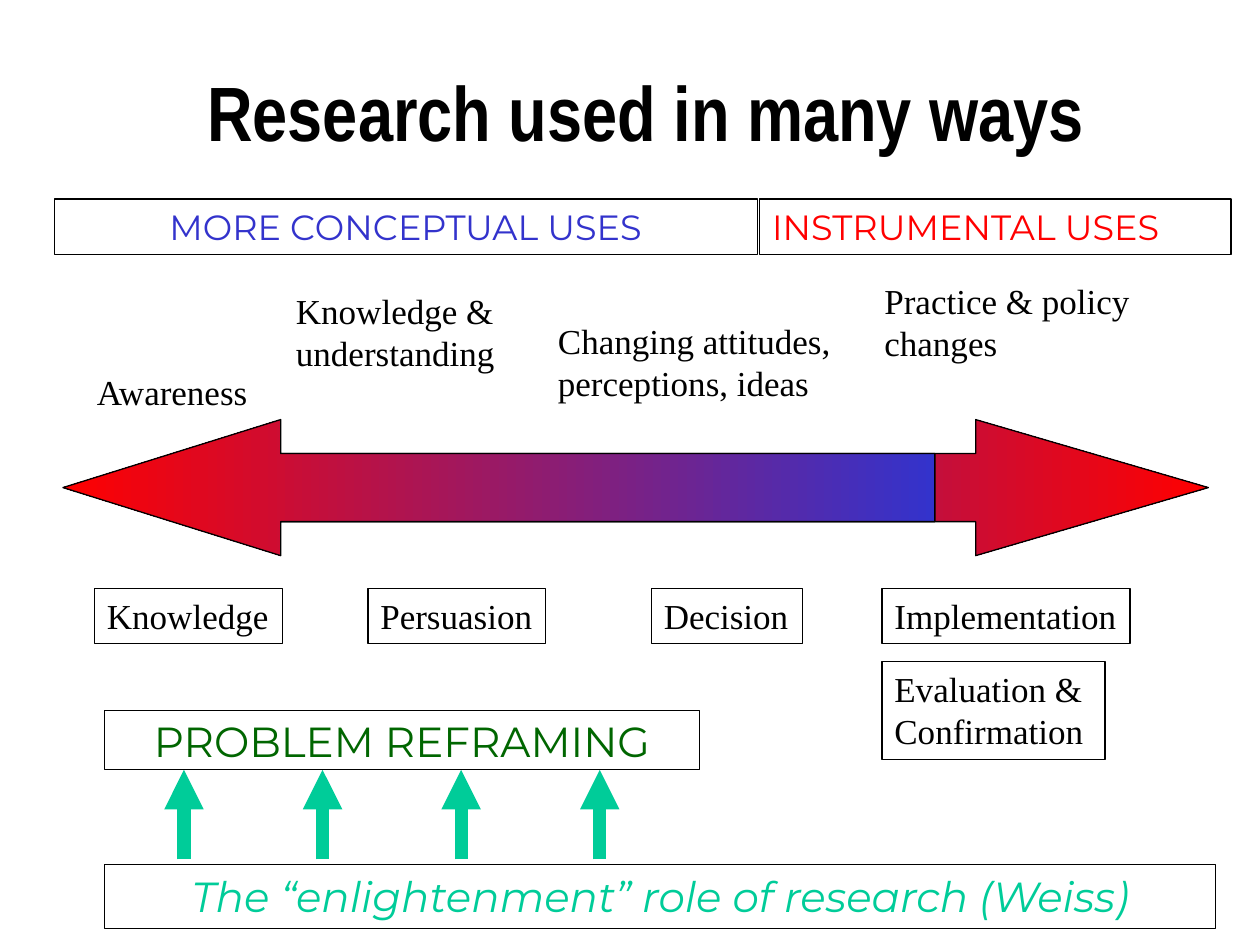
from pptx import Presentation
from pptx.dml.color import RGBColor
from pptx.enum.shapes import MSO_CONNECTOR, MSO_SHAPE
from pptx.enum.text import MSO_ANCHOR, PP_ALIGN
from pptx.oxml.ns import qn
from pptx.util import Inches, Pt
from lxml.etree import SubElement

SERIF = "Times New Roman"
SANS = "Montserrat"
BLACK, BLUE, RED = "000000", "3333CC", "FF0000"
TEAL, GREEN = "00CC99", "006600"


def paint(color, value):
    color.rgb = RGBColor.from_string(value)


def write(frame, text, font=SERIF, size=20, color=BLACK, bold=False,
          italic=False, align=PP_ALIGN.LEFT, anchor=MSO_ANCHOR.TOP, wrap=True):
    frame.text = text
    frame.word_wrap = wrap
    frame.vertical_anchor = anchor
    for para in frame.paragraphs:
        para.alignment = align
        for run in para.runs:
            run.font.name = font
            run.font.size = Pt(size)
            run.font.bold = bold
            run.font.italic = italic
            paint(run.font.color, color)


def shape(slide, kind, box):
    item = slide.shapes.add_shape(kind, *map(Inches, box))
    item.shadow.inherit = False
    paint(item.line.color, BLACK)
    item.line.width = Pt(0.75)
    return item


def frame(slide, box, text, fill=None, **style):
    item = shape(slide, MSO_SHAPE.RECTANGLE, box)
    if fill:
        item.fill.solid()
        paint(item.fill.fore_color, fill)
    else:
        item.fill.background()
    write(item.text_frame, text, **style)


def title(slide, box):
    head = slide.shapes.title
    head.left, head.top, head.width, head.height = map(Inches, box)
    write(head.text_frame, "Research used in many ways", font="Arial Narrow",
          size=44, bold=True, align=PP_ALIGN.CENTER, anchor=MSO_ANCHOR.MIDDLE)


def header(slide, box):
    left, top, width, height = box
    split, gap = 5.58, 0.02
    frame(slide, (left, top, split, height), "MORE CONCEPTUAL USES",
          font=SANS, color=BLUE, align=PP_ALIGN.CENTER)
    frame(slide, (left + split + gap, top, width - split - gap, height),
          "INSTRUMENTAL USES", font=SANS, color=RED)


def effects(slide, box):
    left, top, _, _ = box
    notes = [
        (0, 0.72, 1.75, 0.43, "Awareness"),
        (1.58, 0.08, 2.25, 0.77, "Knowledge & understanding"),
        (3.66, 0.32, 2.5, 0.77, "Changing attitudes, perceptions, ideas"),
        (6.25, 0, 2.42, 0.77, "Practice & policy changes"),
    ]
    for x, y, width, height, text in notes:
        area = slide.shapes.add_textbox(
            *map(Inches, (left + x, top + y, width, height)))
        write(area.text_frame, text)


def arrow(slide, box, ratio, flip=False):
    item = shape(slide, MSO_SHAPE.RIGHT_ARROW, box)
    item.adjustments[0] = 0.5
    item.adjustments[1] = ratio
    item.fill.gradient()
    item.fill.gradient_angle = 0
    for stop, place, color in zip(item.fill.gradient_stops, (0, 1), (BLUE, RED)):
        stop.position = place
        paint(stop.color, color)
    if flip:
        item.element.spPr.find(qn("a:xfrm")).set("flipH", "1")


def range_bar(slide, box):
    left, top, width, height = box
    arrow(slide, (left + 1.67, top, width - 1.67, height), 1.71)
    arrow(slide, (left, top, 6.92, height), 1.6, flip=True)


def stages(slide, box):
    left, top, _, _ = box
    steps = [
        (0, 0, 1.49, 0.44, "Knowledge"),
        (2.17, 0, 1.41, 0.44, "Persuasion"),
        (4.42, 0, 1.2, 0.44, "Decision"),
        (6.25, 0, 1.97, 0.44, "Implementation"),
        (6.25, 0.58, 1.77, 0.78, "Evaluation &\nConfirmation"),
    ]
    for x, y, width, height, text in steps:
        frame(slide, (left + x, top + y, width, height), text, wrap=False)


def riser(slide, x, low, high):
    line = slide.shapes.add_connector(
        MSO_CONNECTOR.STRAIGHT, *map(Inches, (x, low, x, high)))
    paint(line.line.color, TEAL)
    line.line.width = Pt(7.5)
    SubElement(line.line._get_or_add_ln(), qn("a:tailEnd"), type="triangle")
    SubElement(line.element.spPr, qn("a:effectLst"))


def reframe(slide, box):
    left, top, width, height = box
    upper, lower = 0.47, 0.51
    base = top + height - lower
    frame(slide, (left, base, width, lower),
          "The “enlightenment” role of research (Weiss)", font=SANS, size=24,
          color=TEAL, italic=True, align=PP_ALIGN.CENTER)
    for i in range(4):
        riser(slide, left + 0.63 + 1.1 * i, base - 0.04, top + upper)
    frame(slide, (left, top, 4.72, upper), "PROBLEM REFRAMING", fill="FFFFFF",
          font=SANS, size=24, color=GREEN, align=PP_ALIGN.CENTER,
          anchor=MSO_ANCHOR.MIDDLE, wrap=False)


def main():
    deck = Presentation()
    deck.slide_width, deck.slide_height = Inches(10), Inches(7.5)
    slide = deck.slides.add_slide(deck.slide_layouts[5])
    title(slide, (0.42, 0.42, 9.42, 0.92))
    effects(slide, (0.67, 2.17, 8.67, 1.15))
    stages(slide, (0.75, 4.67, 8.22, 1.36))
    header(slide, (0.43, 1.58, 9.34, 0.44))
    range_bar(slide, (0.5, 3.33, 9.09, 1.08))
    reframe(slide, (0.83, 5.64, 8.82, 1.73))
    deck.save("out.pptx")


if __name__ == "__main__":
    main()
